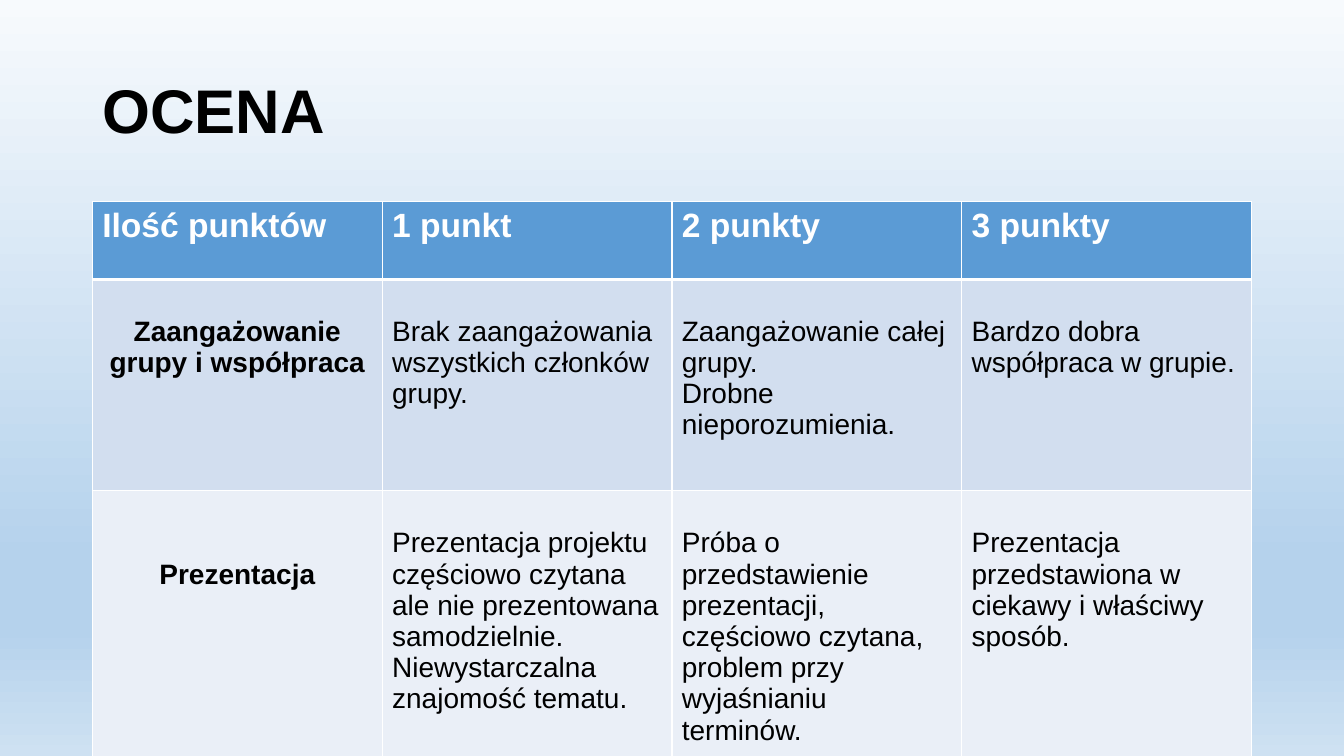
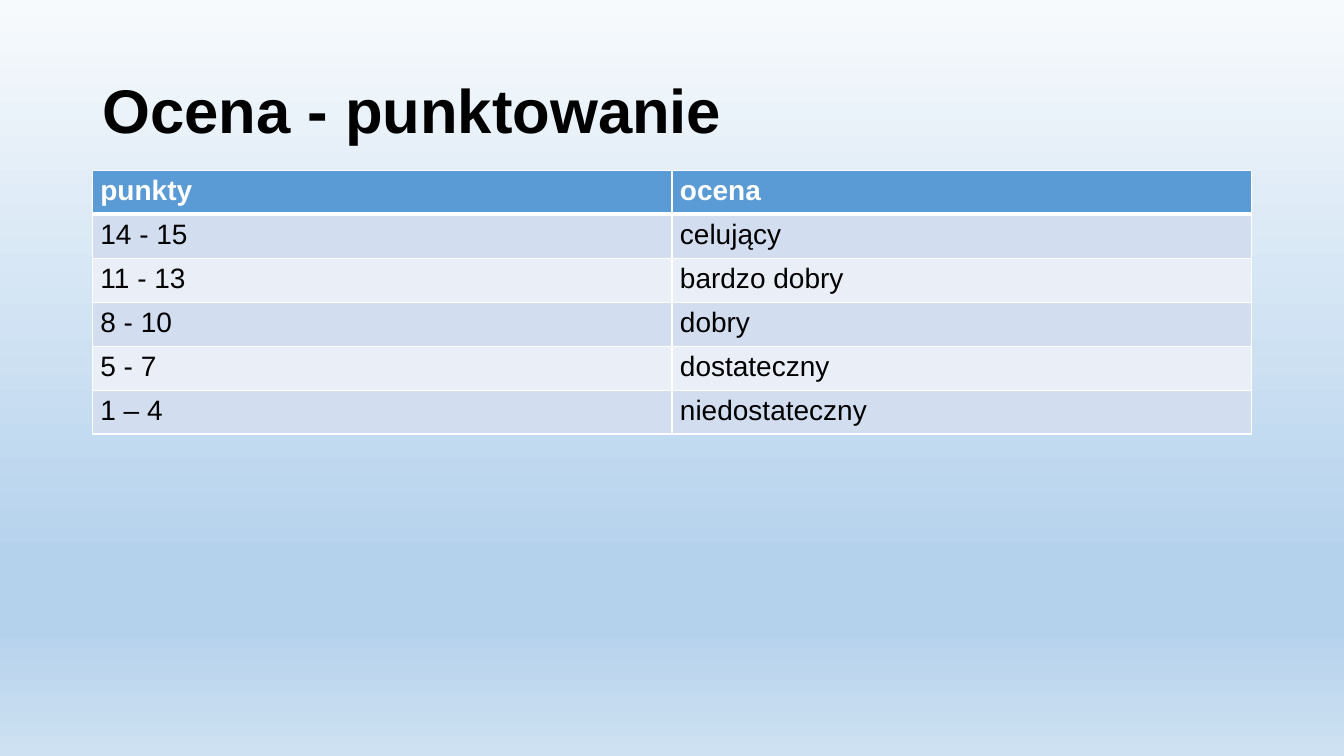
from lxml.etree import SubElement
from pptx import Presentation
from pptx.dml.color import RGBColor
from pptx.enum.text import MSO_ANCHOR, PP_ALIGN
from pptx.oxml.ns import qn
from pptx.util import Cm, Pt

# Shared look
FONT = "Arial"
BLACK, WHITE = "000000", "FFFFFF"
HEAD, BANDS = "5B9BD5", ("EAEFF7", "D2DEEF")
SKY = [(0, "F7FAFD"), (74, "B5D2EC"), (83, "B5D2EC"), (100, "CEE1F2")]
LEFT, WIDE = 2.33, 29.21
LINE = 0.79  # height of one line of table text


def write(frame, text, size=20, bold=False, color=BLACK,
          align=PP_ALIGN.LEFT, space=1.0):
    frame.word_wrap = True
    for i, line in enumerate(text.split("\n")):
        para = frame.paragraphs[0] if i == 0 else frame.add_paragraph()
        para.alignment = align
        para.line_spacing = space
        run = para.add_run()
        run.text = line
        font = run.font
        font.name, font.size, font.bold = FONT, Pt(size), bold
        font.color.rgb = RGBColor.from_string(color)


def build(title, top, rows, tall, size=20, side=0.25, drop=0, label=False):
    """Add a slide with a title and a table; drop is the blank lines above body text."""
    slide = deck.slides.add_slide(deck.slide_layouts[6])
    box = slide.shapes.add_textbox(Cm(LEFT), Cm(1.02), Cm(WIDE), Cm(3.68))
    box.text_frame.vertical_anchor = MSO_ANCHOR.MIDDLE
    write(box.text_frame, title, size=44, bold=True, space=0.9)

    count = len(rows[0])
    grid = slide.shapes.add_table(len(rows), count, Cm(LEFT), Cm(top),
                                  Cm(WIDE), Cm(sum(tall))).table
    grid.horz_banding = False
    for col in grid.columns:
        col.width = Cm(WIDE / count)
    for r, row in enumerate(rows):
        grid.rows[r].height = Cm(tall[r])
        for c, text in enumerate(row):
            cell = grid.cell(r, c)
            first = label and r > 0 and c == 0
            # Label cells with a single word sit one line lower
            skip = (drop + (first and " " not in text)) if r else 0
            cell.margin_left = cell.margin_right = Cm(side)
            cell.margin_top = Cm(0.13 + skip * LINE)
            cell.margin_bottom = Cm(0.13)
            # White borders, thick below the header
            props = cell._tc.get_or_add_tcPr()
            thick = {"a:lnT": r == 1, "a:lnB": r == 0}
            for tag in ("a:lnL", "a:lnR", "a:lnT", "a:lnB"):
                edge = SubElement(props, qn(tag), w=str(Pt(3 if thick.get(tag) else 1)))
                SubElement(SubElement(edge, qn("a:solidFill")),
                           qn("a:srgbClr"), val=WHITE)
            cell.fill.solid()
            cell.fill.fore_color.rgb = RGBColor.from_string(BANDS[r % 2] if r else HEAD)
            write(cell.text_frame, text, size=20 if r else size,
                  bold=r == 0 or first, color=BLACK if r else WHITE,
                  align=PP_ALIGN.CENTER if first else PP_ALIGN.LEFT)


deck = Presentation()
deck.slide_width, deck.slide_height = Cm(33.87), Cm(19.05)

# Background gradient on the master
master = deck.slide_master
fill = master.background.fill
fill.gradient()
fill.gradient_angle = 270
stops = next(master.element.iter(qn("a:gsLst")))
for stop in list(stops):
    stops.remove(stop)
for place, tint in SKY:
    stop = SubElement(stops, qn("a:gs"), pos=str(place * 1000))
    SubElement(stop, qn("a:srgbClr"), val=tint)

# Slide 1: criteria
build("OCENA", 5.08, [
    ("Ilość punktów", "1 punkt", "2 punkty", "3 punkty"),
    ("Zaangażowanie grupy i współpraca",
     "Brak zaangażowania wszystkich członków grupy.",
     "Zaangażowanie całej grupy.\nDrobne nieporozumienia.",
     "Bardzo dobra współpraca w grupie."),
    ("Prezentacja",
     "Prezentacja projektu częściowo czytana ale nie prezentowana "
     "samodzielnie. Niewystarczalna znajomość tematu.",
     "Próba o przedstawienie prezentacji, częściowo czytana, "
     "problem przy wyjaśnianiu terminów.",
     "Prezentacja przedstawiona w ciekawy i właściwy sposób."),
], tall=(1.96, 5.33, 6.55), size=24, drop=1, label=True)

# Slide 2: grades
build("Ocena - punktowanie", 4.29, [
    ("punkty", "ocena"),
    ("14 - 15", "celujący"),
    ("11 - 13", "bardzo dobry"),
    ("8 - 10", "dobry"),
    ("5 - 7", "dostateczny"),
    ("1 – 4", "niedostateczny"),
], tall=[1.05] * 6, side=0.2)

deck.save("out.pptx")
